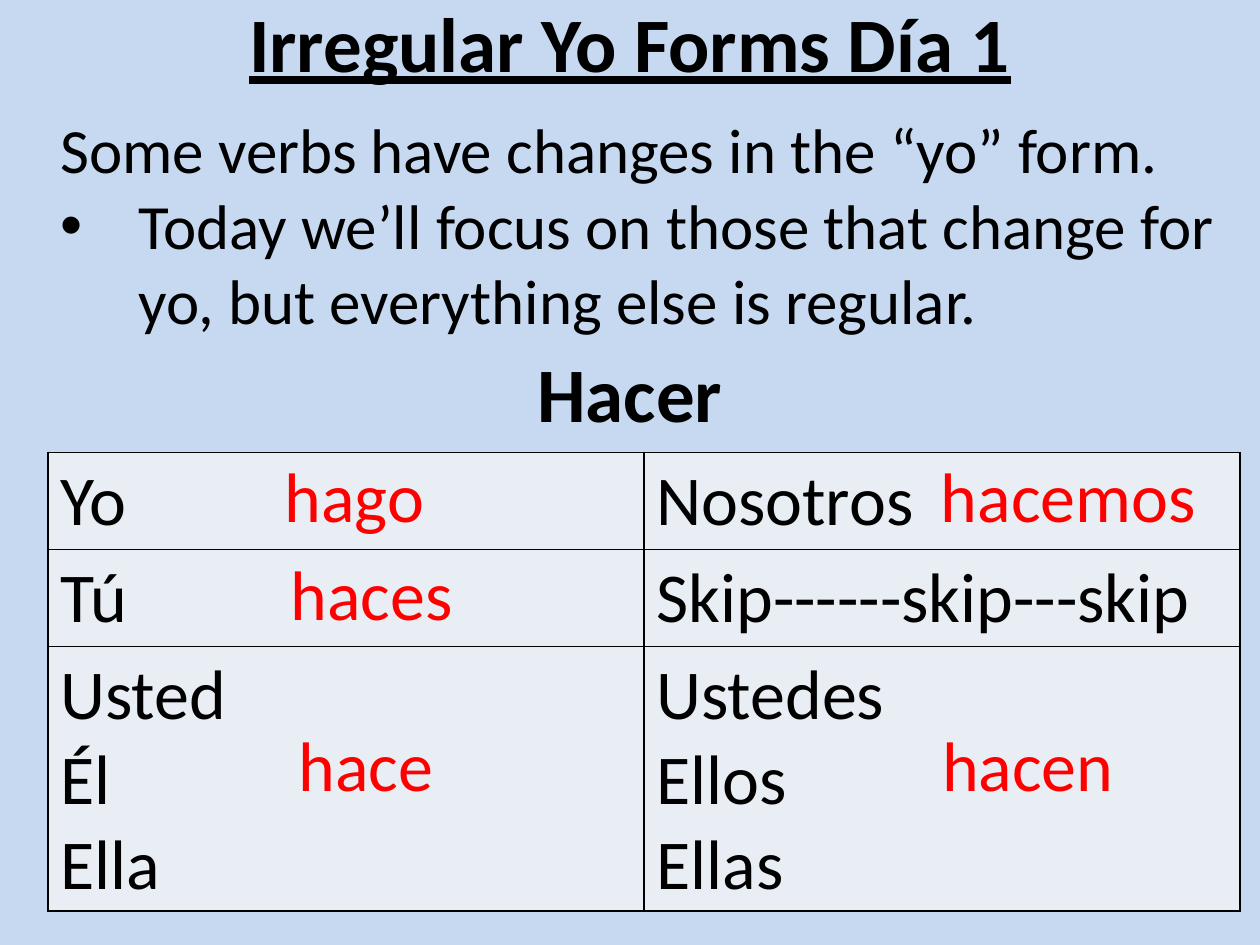
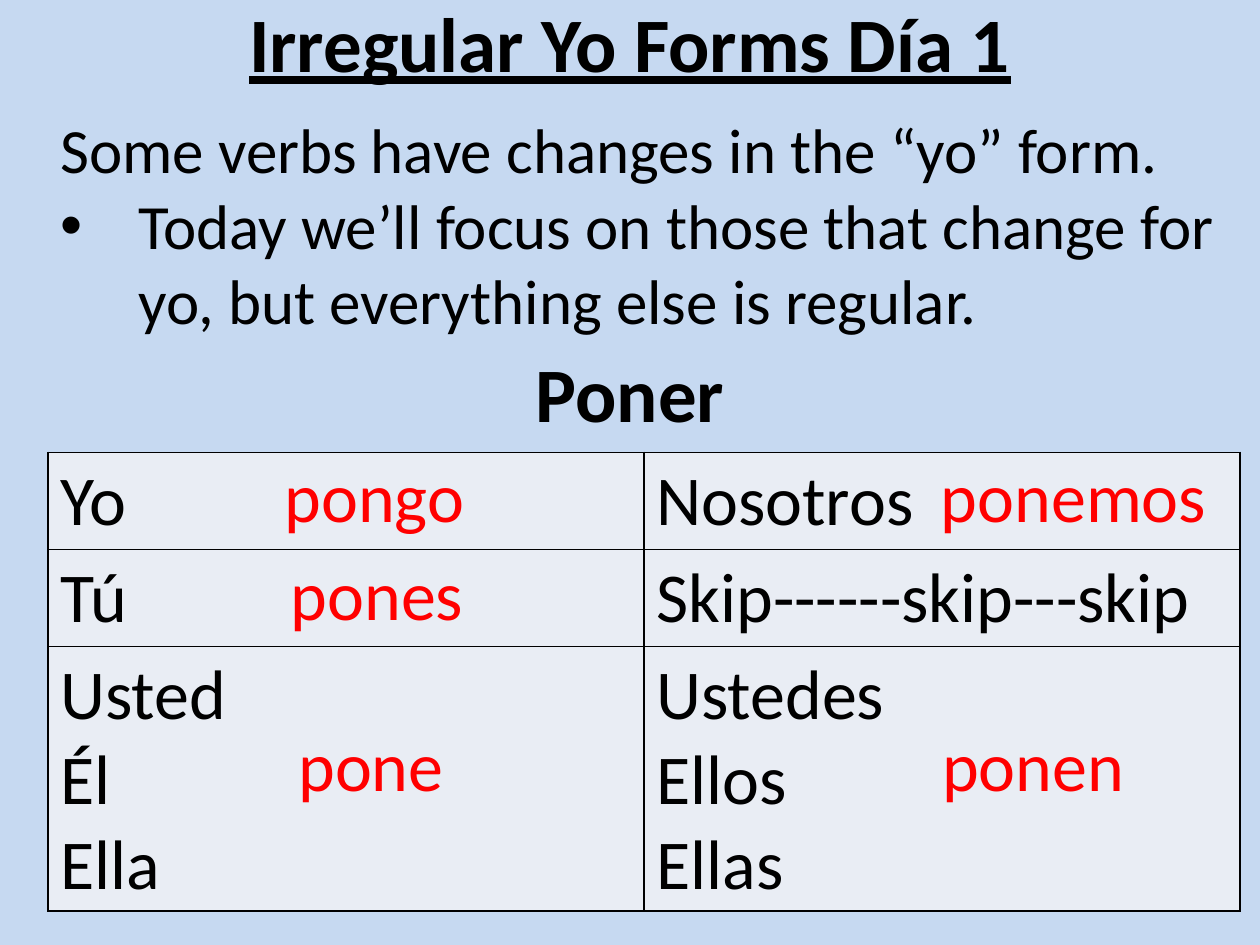
from lxml import etree
from pptx import Presentation
from pptx.dml.color import RGBColor
from pptx.enum import text
from pptx.oxml import ns
from pptx.util import Inches, Pt

COLORS = {"back": "C6D9F1", "cell": "E9EDF4", "ink": "000000", "answer": "FF0000"}
FONT = "Calibri"
TITLE = "Irregular Yo Forms Día 1"
INTRO = [
    "Some verbs have changes in the “yo” form.",
    "Today we’ll focus on those that change for yo, but everything else is regular.",
]
PRONOUNS = [
    (["Yo"], ["Nosotros"]),
    (["Tú"], ["Skip------skip---skip"]),
    (["Usted", "Él", "Ella"], ["Ustedes", "Ellos", "Ellas"]),
]
ROW_HEIGHTS = [0.77, 0.77, 2.09]
ANSWER_SPOTS = [(2.16, 3.54), (2.21, 4.32), (2.27, 5.68), (7.37, 3.54), (7.38, 5.68)]
VERBS = {
    "Hacer": ["hago", "haces", "hace", "hacemos", "hacen"],
    "Poner": ["pongo", "pones", "pone", "ponemos", "ponen"],
}


def write(tf, lines, size, color="ink", bold=False, align=text.PP_ALIGN.LEFT):
    tf.word_wrap = True
    for i, line in enumerate(lines):
        p = tf.add_paragraph() if i else tf.paragraphs[0]
        p.alignment = align
        r = p.add_run()
        r.text = line
        r.font.name = FONT
        r.font.size = Pt(size)
        r.font.bold = bold
        r.font.color.rgb = RGBColor.from_string(COLORS[color])


def add_text(s, left, top, width, height, lines, size, **style):
    sp = s.shapes.add_textbox(Inches(left), Inches(top), Inches(width), Inches(height))
    write(sp.text_frame, lines, size, **style)
    return sp.text_frame


prs = Presentation()
prs.slide_width, prs.slide_height = Inches(10), Inches(7.5)
back = prs.slide_master.background.fill
back.solid()
back.fore_color.rgb = RGBColor.from_string(COLORS["back"])

for verb, answers in VERBS.items():
    s = prs.slides.add_slide(prs.slide_layouts[5])

    title = s.shapes.title
    title.left, title.top = Inches(0), Inches(-0.13)
    title.width, title.height = Inches(10), Inches(0.92)
    tf = title.text_frame
    tf.auto_size = text.MSO_AUTO_SIZE.NONE
    tf.vertical_anchor = text.MSO_ANCHOR.MIDDLE
    write(tf, [TITLE], 44, bold=True, align=text.PP_ALIGN.CENTER)
    tf.paragraphs[0].runs[0].font.underline = True

    tf = add_text(s, 0.38, 0.83, 9.46, 1.92, INTRO, 36)
    pPr = tf.paragraphs[1]._p.get_or_add_pPr()
    pPr.set("marL", str(Inches(0.62)))
    pPr.set("indent", str(Inches(-0.62)))
    etree.SubElement(pPr, ns.qn("a:buFont"), typeface="Arial")
    etree.SubElement(pPr, ns.qn("a:buChar"), char="•")

    table = s.shapes.add_table(
        3, 2, Inches(0.38), Inches(3.59), Inches(9.46), Inches(sum(ROW_HEIGHTS))
    ).table
    for row, height, pronouns in zip(table.rows, ROW_HEIGHTS, PRONOUNS):
        row.height = Inches(height)
        for cell, lines in zip(row.cells, pronouns):
            write(cell.text_frame, lines, 40)
            tcPr = cell._tc.get_or_add_tcPr()
            for side in ("lnL", "lnR", "lnT", "lnB"):
                ln = etree.SubElement(tcPr, ns.qn(f"a:{side}"), w=str(Pt(1)))
                solid = etree.SubElement(ln, ns.qn("a:solidFill"))
                etree.SubElement(solid, ns.qn("a:srgbClr"), val=COLORS["ink"])
            cell.fill.solid()
            cell.fill.fore_color.rgb = RGBColor.from_string(COLORS["cell"])

    tf = add_text(s, 0, 2.65, 10, 0.92, [verb], 44, bold=True, align=text.PP_ALIGN.CENTER)
    tf.vertical_anchor = text.MSO_ANCHOR.MIDDLE

    for (left, top), answer in zip(ANSWER_SPOTS, answers):
        add_text(s, left, top, 2.63, 0.77, [answer], 40, color="answer")

prs.save("out.pptx")
